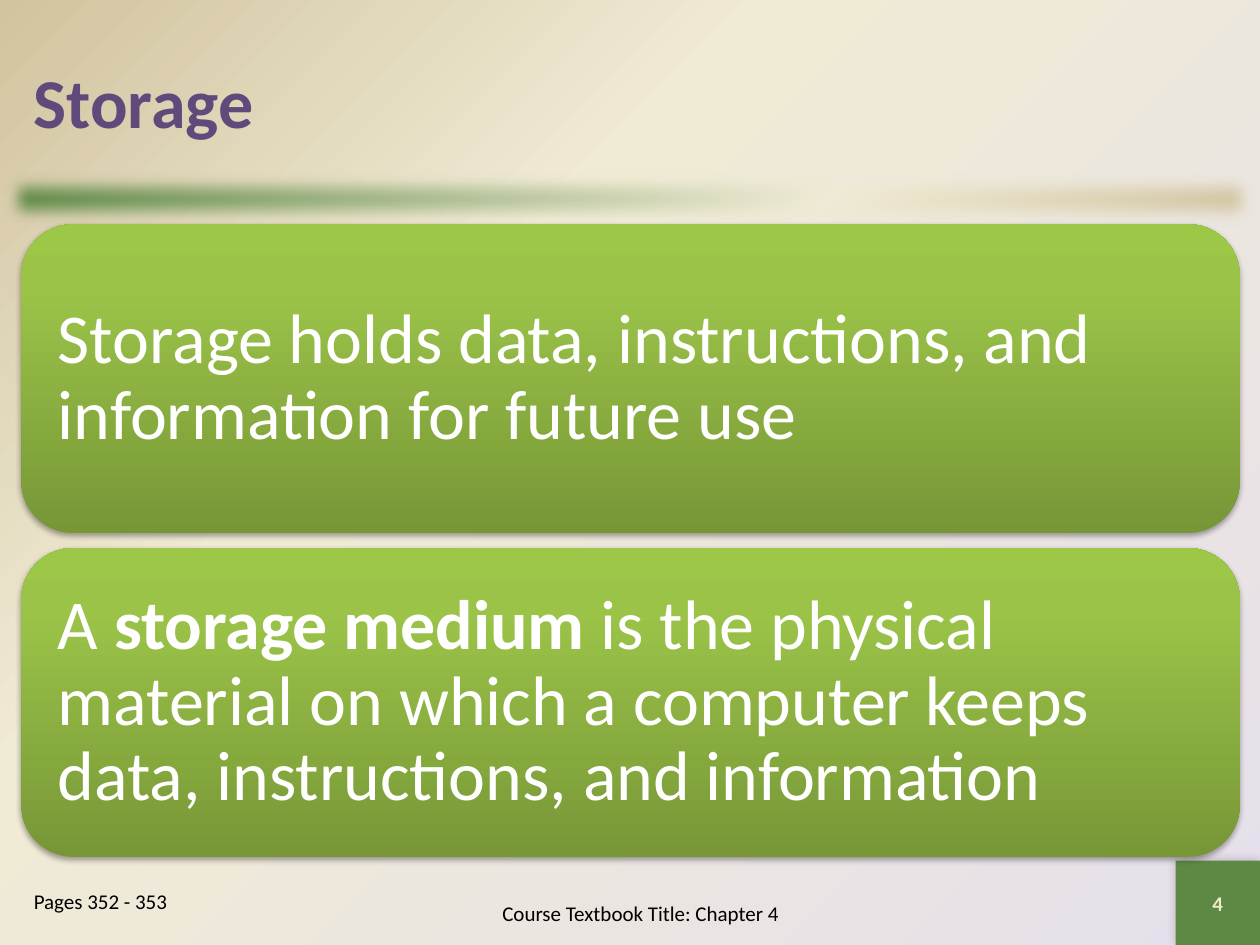
from lxml.etree import SubElement
from pptx import Presentation
from pptx.dml.color import RGBColor
from pptx.enum.shapes import MSO_SHAPE
from pptx.enum.text import MSO_ANCHOR, PP_ALIGN
from pptx.oxml.ns import qn
from pptx.util import Inches, Pt

COLORS = {
    "lilac": "E6E0EC", "cream": "F0EBD5", "tan": "D1C39F",
    "green": "5E8945", "leaf": "779737", "lime": "9BC348", "bright": "9DC746",
    "purple": "604A7B", "white": "FFFFFF", "black": "000000", "pale": "EEEBCA",
}


def grad(fill, root, stops, angle=None):
    """Fill with (percent, color) stops: linear, or radial without an angle."""
    fill.gradient()
    node = root.find(".//" + qn("a:gradFill"))
    for child in list(node):
        node.remove(child)
    items = SubElement(node, qn("a:gsLst"))
    for pos, name in stops:
        stop = SubElement(items, qn("a:gs"), pos=str(pos * 1000))
        SubElement(stop, qn("a:srgbClr"), val=COLORS[name])
    if angle is None:
        way = SubElement(node, qn("a:path"), path="circle")
        SubElement(way, qn("a:fillToRect"), l="100000", t="100000")
        SubElement(node, qn("a:tileRect"), r="-100000", b="-100000")
    else:
        SubElement(node, qn("a:lin"), ang=str(angle * 60000), scaled="0")


def write(shape, text, size=12, color="black", bold=False, align=PP_ALIGN.LEFT,
          anchor=MSO_ANCHOR.MIDDLE, inset=None, spacing=None, before=None):
    """Set one paragraph; parts between asterisks turn bold."""
    frame = shape.text_frame
    frame.word_wrap = True
    frame.vertical_anchor = anchor
    if inset is not None:
        frame.margin_left = frame.margin_right = Inches(inset)
        frame.margin_top = frame.margin_bottom = Inches(inset)
    para = frame.paragraphs[0]
    para.alignment = align
    para.line_spacing = spacing
    para.space_before = before
    for i, part in enumerate(text.split("*")):
        run = para.add_run()
        run.text = part
        run.font.name = "Calibri"
        run.font.size = Pt(size)
        run.font.bold = bold or i % 2 == 1
        run.font.color.rgb = RGBColor.from_string(COLORS[color])


prs = Presentation()
prs.slide_width, prs.slide_height = Inches(10), Inches(7.5)
slide = prs.slides.add_slide(prs.slide_layouts[6])
shapes = slide.shapes
grad(slide.background.fill, slide._element,
     [(0, "lilac"), (65, "cream"), (100, "tan")])

# Soft bar, page square and the two cards
boxes = []
for kind, *place in [
    (MSO_SHAPE.RECTANGLE, 0, 1.33, 10, 0.5),
    (MSO_SHAPE.RECTANGLE, 9.33, 6.83, 0.67, 0.67),
    (MSO_SHAPE.ROUNDED_RECTANGLE, 0.17, 1.78, 9.67, 2.45),
    (MSO_SHAPE.ROUNDED_RECTANGLE, 0.17, 4.35, 9.67, 2.45),
]:
    box = shapes.add_shape(kind, *map(Inches, place))
    box.line.fill.background()
    box.shadow.inherit = False
    boxes.append(box)
bar, square, *cards = boxes

grad(bar.fill, bar._element, [(0, "green"), (65, "cream"), (100, "tan")], 45)
effects = bar._element.spPr.find(qn("a:effectLst"))
SubElement(effects, qn("a:softEdge"), rad=str(Pt(10)))

square.fill.solid()
square.fill.fore_color.rgb = RGBColor.from_string(COLORS["green"])
write(square, "4", color="pale", bold=True, align=PP_ALIGN.CENTER)

words = [
    "Storage holds data, instructions, and information for future use",
    "A *storage medium* is the physical material on which a computer keeps "
    "data, instructions, and information",
]
for card, text in zip(cards, words):
    grad(card.fill, card._element,
         [(0, "leaf"), (80, "lime"), (100, "bright")], 270)
    write(card, text, size=40, color="white", inset=0.17, spacing=0.9)

for box, alpha, blur, dist, angle in [
    (square, 20, 6, 0, 225), *((card, 35, 3.1, 1.8, 90) for card in cards),
]:
    effects = box._element.spPr.find(qn("a:effectLst"))
    shade = SubElement(effects, qn("a:outerShdw"), blurRad=str(Pt(blur)),
                       dist=str(Pt(dist)), dir=str(angle * 60000), rotWithShape="0")
    tint = SubElement(shade, qn("a:srgbClr"), val=COLORS["black"])
    SubElement(tint, qn("a:alpha"), val=str(alpha * 1000))

# Title and footer
for place, text, style in [
    ((0.17, 0.17, 9.67, 1.25), "Storage", dict(size=40, color="purple", bold=True)),
    ((3, 7, 4.17, 0.5), "Course Textbook Title: Chapter 4",
     dict(align=PP_ALIGN.CENTER)),
    ((0.17, 7, 1.83, 0.5), "Pages 352 - 353",
     dict(anchor=MSO_ANCHOR.TOP, before=Pt(2.4))),
]:
    write(shapes.add_textbox(*map(Inches, place)), text, **style)

prs.save("out.pptx")
